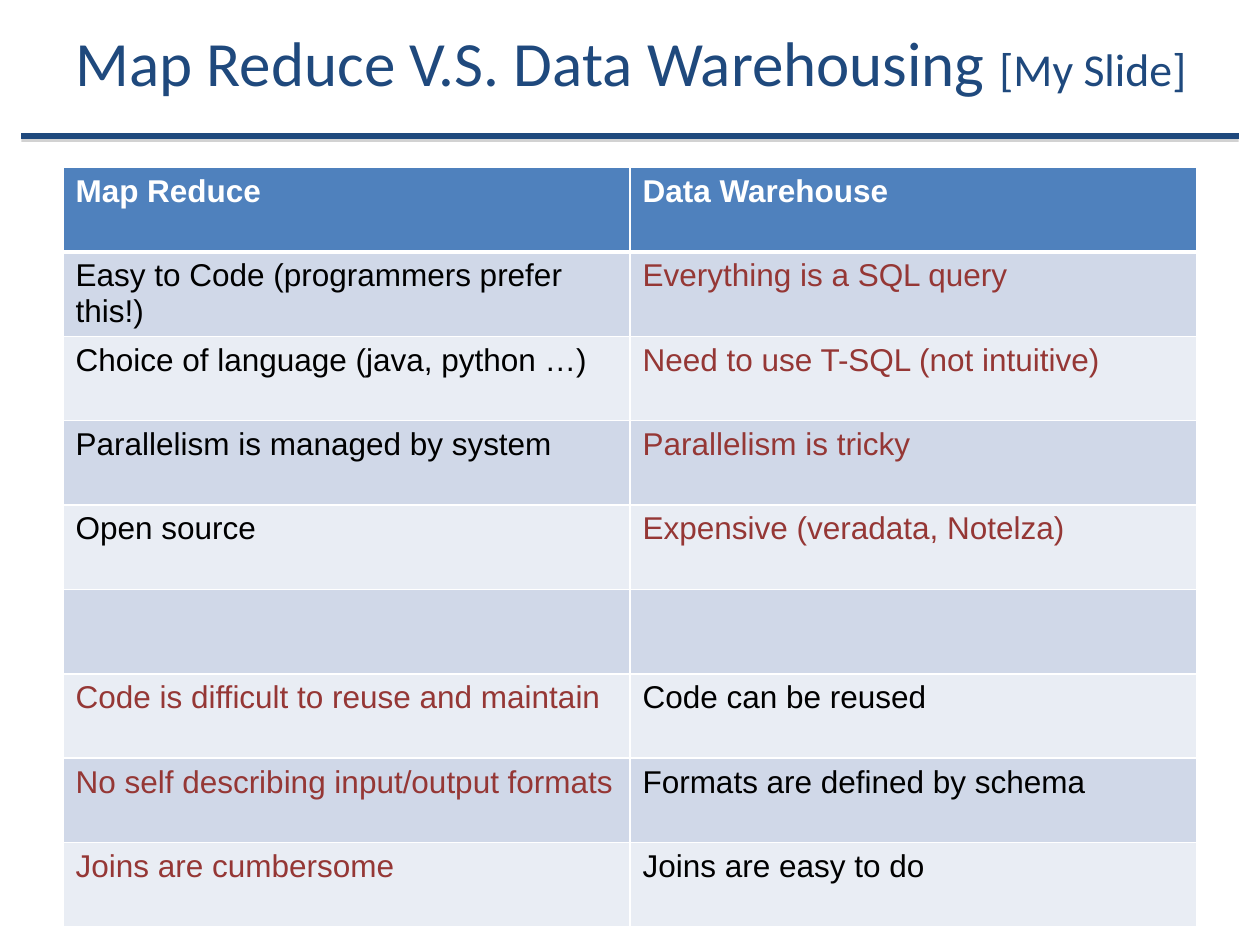
import dataclasses

import lxml.etree
import pptx
import pptx.dml.color
import pptx.enum.shapes
import pptx.enum.text
import pptx.oxml
import pptx.oxml.ns
import pptx.util

Inches = pptx.util.Inches
Pt = pptx.util.Pt
qn = pptx.oxml.ns.qn


@dataclasses.dataclass(frozen=True)
class Theme:
    navy: str = "1F497D"
    header: str = "4F81BD"
    bands: tuple = ("D0D8E8", "E9EDF4")
    white: str = "FFFFFF"
    strength: str = "000000"
    weakness: str = "953735"
    shadow: str = "808080"
    title_font: str = "Calibri"
    table_font: str = "Arial"
    title_size: float = 36
    remark_size: float = 26.1
    table_size: float = 18


THEME = Theme()

HEADINGS = ("Map Reduce", "Data Warehouse")
MAP_REDUCE_WINS = (
    ("Easy to Code (programmers prefer this!)", "Everything is a SQL query"),
    ("Choice of language (java, python …)", "Need to use T-SQL (not intuitive)"),
    ("Parallelism is managed by system", "Parallelism is tricky"),
    ("Open source", "Expensive (veradata, Notelza)"),
)
WAREHOUSE_WINS = (
    ("Code is difficult to reuse and maintain", "Code can be reused"),
    ("No self describing input/output formats", "Formats are defined by schema"),
    ("Joins are cumbersome", "Joins are easy to do"),
)


def rgb(color):
    return pptx.dml.color.RGBColor.from_string(color)


def format_font(font, name, size, color, bold=False):
    font.name = name
    font.size = Pt(size)
    font.bold = bold
    font.color.rgb = rgb(color)


def add_title(slide, title, remark):
    shape = slide.shapes.title
    shape.left, shape.top = Inches(0.5), Inches(0.05)
    shape.width, shape.height = Inches(9.42), Inches(0.87)
    text_frame = shape.text_frame
    text_frame.word_wrap = True
    text_frame.auto_size = pptx.enum.text.MSO_AUTO_SIZE.NONE
    text_frame.vertical_anchor = pptx.enum.text.MSO_ANCHOR.MIDDLE
    paragraph = text_frame.paragraphs[0]
    paragraph.alignment = pptx.enum.text.PP_ALIGN.LEFT
    for text, size in ((title, THEME.title_size), (remark, THEME.remark_size)):
        run = paragraph.add_run()
        run.text = text
        format_font(run.font, THEME.title_font, size, THEME.navy)


def add_rule(slide):
    rule = slide.shapes.add_connector(
        pptx.enum.shapes.MSO_CONNECTOR.STRAIGHT,
        Inches(9.83), Inches(1.08), Inches(0.17), Inches(1.08))
    rule.line.color.rgb = rgb(THEME.navy)
    rule.line.width = Pt(3)
    effects = lxml.etree.SubElement(rule._element.spPr, qn("a:effectLst"))
    shadow = lxml.etree.SubElement(
        effects, qn("a:outerShdw"), blurRad="0", dist=str(Pt(1.8)),
        dir="5400000", rotWithShape="0")
    color = lxml.etree.SubElement(shadow, qn("a:srgbClr"), val=THEME.shadow)
    lxml.etree.SubElement(color, qn("a:alpha"), val="35000")


def add_border(cell, side, width):
    properties = cell._tc.get_or_add_tcPr()
    line = lxml.etree.SubElement(properties, qn(f"a:ln{side}"), w=str(Pt(width)))
    fill = lxml.etree.SubElement(line, qn("a:solidFill"))
    lxml.etree.SubElement(fill, qn("a:srgbClr"), val=THEME.white)


def fill_cell(cell, text, fill, color, borders, bold=False):
    for side, width in zip("LRTB", borders):
        add_border(cell, side, width)
    cell.fill.solid()
    cell.fill.fore_color.rgb = rgb(fill)
    cell.text_frame.text = text
    paragraph = cell.text_frame.paragraphs[0]
    format_font(paragraph.font, THEME.table_font, THEME.table_size, color, bold)
    for run in paragraph.runs:
        format_font(run.font, THEME.table_font, THEME.table_size, color, bold)


def add_comparison(slide):
    win, lose = THEME.strength, THEME.weakness
    body = [(texts, (win, lose)) for texts in MAP_REDUCE_WINS]
    body.append((("", ""), (win, win)))
    body += [(texts, (lose, win)) for texts in WAREHOUSE_WINS]
    table = slide.shapes.add_table(
        len(body) + 1, len(HEADINGS),
        Inches(0.5), Inches(1.33), Inches(9), Inches(6.03)).table
    for column, heading in enumerate(HEADINGS):
        fill_cell(table.cell(0, column), heading, THEME.header, THEME.white,
                  (1, 1, 1, 3), bold=True)
    for row, (texts, colors) in enumerate(body, start=1):
        band = THEME.bands[(row - 1) % 2]
        borders = (1, 1, 3 if row == 1 else 1, 1)
        for column, (text, color) in enumerate(zip(texts, colors)):
            fill_cell(table.cell(row, column), text, band, color, borders)


def main():
    presentation = pptx.Presentation()
    presentation.slide_width = Inches(10)
    presentation.slide_height = Inches(7.5)
    slide = presentation.slides.add_slide(presentation.slide_layouts[5])
    add_rule(slide)
    add_title(slide, "Map Reduce V.S. Data Warehousing ", "[My Slide]")
    add_comparison(slide)
    presentation.save("out.pptx")


if __name__ == "__main__":
    main()
